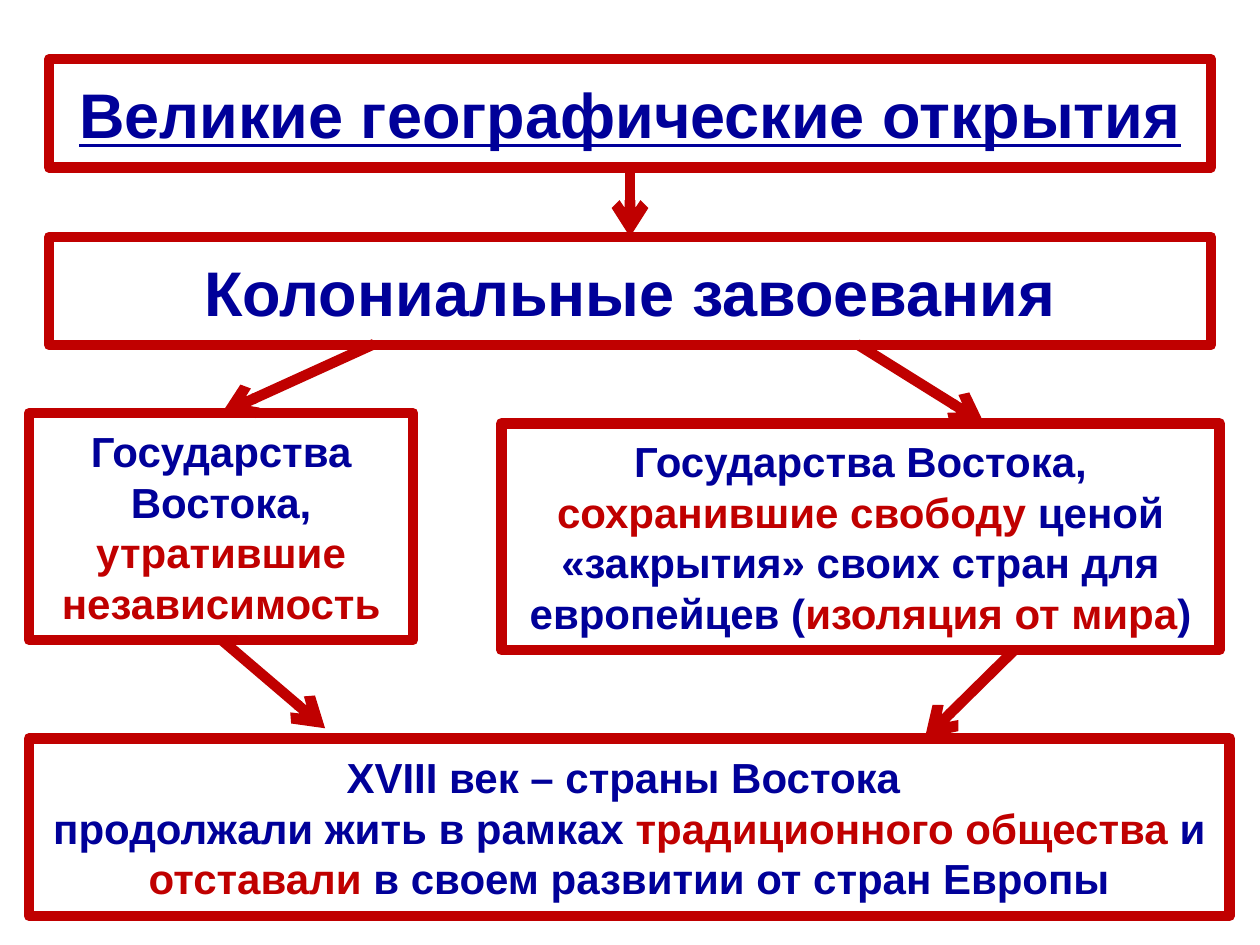
from lxml import etree
from pptx import Presentation
from pptx.dml.color import RGBColor
from pptx.enum.shapes import MSO_CONNECTOR, MSO_SHAPE
from pptx.enum.text import MSO_ANCHOR, MSO_AUTO_SIZE, PP_ALIGN
from pptx.oxml.ns import qn
from pptx.util import Inches, Pt

RECTANGLE = MSO_SHAPE.RECTANGLE
STRAIGHT = MSO_CONNECTOR.STRAIGHT
MIDDLE = MSO_ANCHOR.MIDDLE
NO_FIT = MSO_AUTO_SIZE.NONE
CENTER = PP_ALIGN.CENTER

COLORS = {"paper": "FFFFFF", "text": "000099", "accent": "C00000"}
COLUMNS, ROWS = 100, 75
TITLE_ONLY = 5


class SchemePage:
    font = "Arial"
    stroke = Pt(6)

    def __init__(self, deck):
        self.page = deck.slides.add_slide(deck.slide_layouts[TITLE_ONLY])
        self.column = deck.slide_width / COLUMNS
        self.row = deck.slide_height / ROWS

    def color(self, name):
        return RGBColor.from_string(COLORS[name])

    def place(self, *grid):
        steps = (self.column, self.row) * 2
        return [round(value * step) for value, step in zip(grid, steps)]

    def outline(self, item):
        item.line.color.rgb = self.color("accent")
        item.line.width = self.stroke

    def set_text(self, box, paragraphs, size, underline=False):
        frame = box.text_frame
        frame.word_wrap = True
        frame.auto_size = NO_FIT
        frame.vertical_anchor = MIDDLE
        for index, spans in enumerate(paragraphs):
            para = frame.add_paragraph() if index else frame.paragraphs[0]
            para.alignment = CENTER
            for text, color in spans:
                span = para.add_run()
                span.text = text
                span.font.name = self.font
                span.font.size = Pt(size)
                span.font.bold = True
                span.font.underline = underline
                span.font.color.rgb = self.color(color)

    def frame(self, box):
        box.fill.solid()
        box.fill.fore_color.rgb = self.color("paper")
        self.outline(box)

    def title(self, grid, text):
        box = self.page.shapes.title
        box.left, box.top, box.width, box.height = self.place(*grid)
        self.frame(box)
        self.set_text(box, [[(text, "text")]], 36, underline=True)

    def box(self, grid, paragraphs, size=24):
        box = self.page.shapes.add_shape(RECTANGLE, *self.place(*grid))
        box.shadow.inherit = False
        self.frame(box)
        self.set_text(box, paragraphs, size)

    def arrow(self, *grid):
        arrow = self.page.shapes.add_connector(STRAIGHT, *self.place(*grid))
        self.outline(arrow)
        properties = arrow.element.spPr
        etree.SubElement(properties.find(qn("a:ln")), qn("a:tailEnd"), type="arrow")
        etree.SubElement(properties, qn("a:effectLst"))


def main():
    deck = Presentation()
    deck.slide_width, deck.slide_height = Inches(10), Inches(7.5)
    scheme = SchemePage(deck)

    scheme.title((3.9, 4.7, 92.2, 8.6), "Великие географические открытия")
    scheme.box((3.9, 18.8, 92.2, 8.6), [[("Колониальные завоевания", "text")]], 36)
    scheme.box((2.3, 32.8, 30.5, 18), [[
        ("Государства Востока, ", "text"),
        ("утратившие независимость", "accent"),
    ]])
    scheme.box((39.8, 33.6, 57, 18), [[
        ("Государства Востока, ", "text"),
        ("сохранившие свободу ", "accent"),
        ("ценой «закрытия» своих стран для европейцев (", "text"),
        ("изоляция от мира", "accent"),
        (")", "text"),
    ]])
    scheme.box((2.3, 58.6, 95.3, 14.1), [
        [("XVIII век – страны Востока ", "text")],
        [
            ("продолжали жить в рамках ", "text"),
            ("традиционного общества ", "accent"),
            ("и ", "text"),
            ("отставали", "accent"),
            (" в своем развитии от стран Европы", "text"),
        ],
    ])

    for ends in (
        (50, 13.3, 50, 18.8),
        (68, 27.3, 78.1, 33.6),
        (29.7, 27.3, 17.6, 32.8),
        (17.6, 50.8, 25.8, 57.8),
        (80.5, 51.6, 73.4, 58.6),
    ):
        scheme.arrow(*ends)

    deck.save("out.pptx")


if __name__ == "__main__":
    main()
